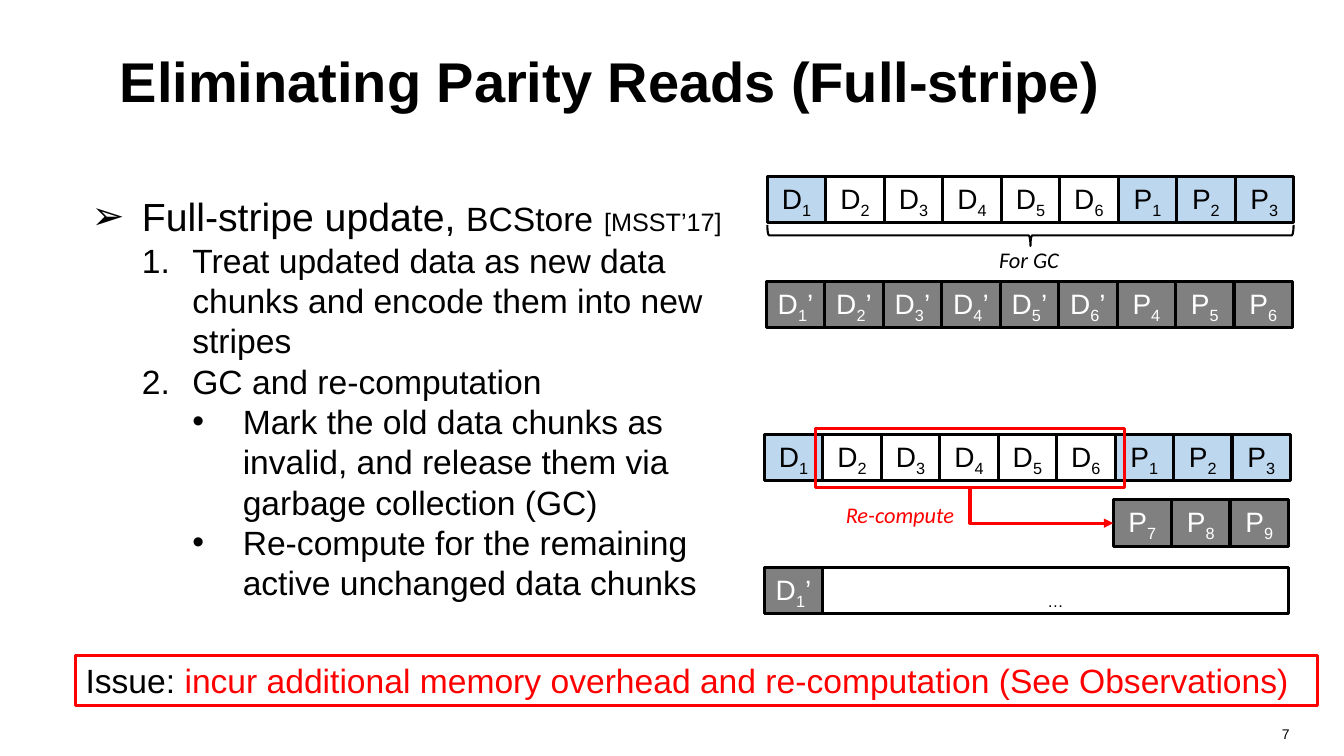
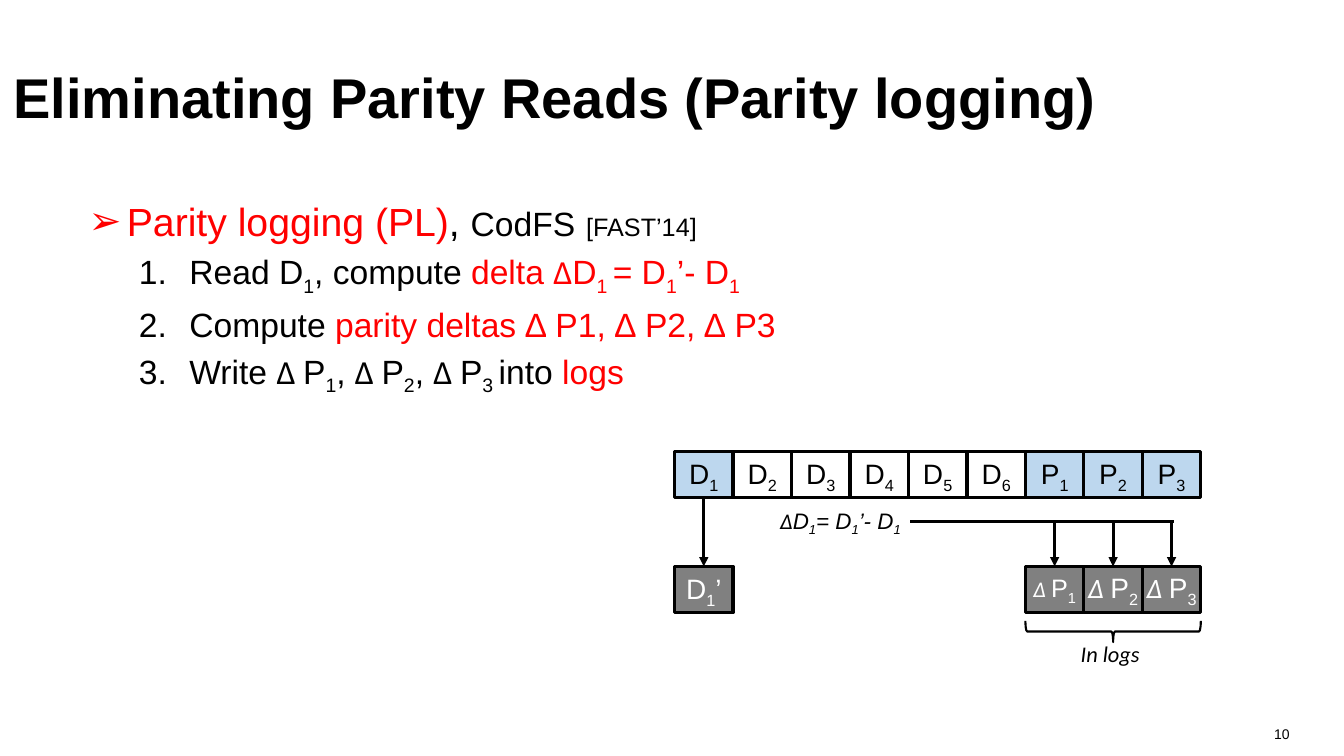
from dataclasses import dataclass, field
from typing import Any

import lxml.etree
import pptx
import pptx.dml.color
import pptx.enum.shapes
import pptx.enum.text
import pptx.oxml.ns
import pptx.util

Inches = pptx.util.Inches
SHAPE = pptx.enum.shapes.MSO_SHAPE
LINE = pptx.enum.shapes.MSO_CONNECTOR
ALIGN = pptx.enum.text.PP_ALIGN
ANCHOR = pptx.enum.text.MSO_ANCHOR
qn = pptx.oxml.ns.qn

COLORS = {
    "black": "000000",
    "white": "FFFFFF",
    "red": "FF0000",
    "blue": "BDD7EE",
    "gray": "808080",
}
BASE_FORMAT = {"name": "Arial", "size": 24, "color": "black", "bold": False, "italic": False}
CAPTION = {"name": "Calibri", "size": 16, "italic": True}
CELL_W, CELL_H = 0.58, 0.46
BRACE_H = 0.21
STRIPE = ["D_1", "D_2", "D_3", "D_4", "D_5", "D_6", "P_1", "P_2", "P_3"]


@dataclass
class Run:
    text: str
    subscript: bool = False
    format: dict[str, Any] = field(default_factory=dict)


@dataclass
class Paragraph:
    runs: list[Run]
    bullet: str = ""
    level: int = 0
    indent: float = 0
    hanging: float = 0
    space_before: int = 0
    align: Any = ALIGN.LEFT


@dataclass
class Box:
    left: float
    top: float
    width: float
    height: float

    def lengths(self) -> list[Any]:
        return [Inches(v) for v in (self.left, self.top, self.width, self.height)]


def rich(text: str, **style: Any) -> list[Run]:
    parts = text.split("_")
    return [Run(part, i % 2 == 1, style) for i, part in enumerate(parts) if part]


def rgb(color: str) -> Any:
    return pptx.dml.color.RGBColor.from_string(COLORS[color])


def add_element(parent: Any, tag: str, **attributes: str) -> Any:
    return lxml.etree.SubElement(parent, qn(tag), attributes)


def write_run(paragraph: Any, spec_run: Run) -> None:
    run = paragraph.add_run()
    run.text = spec_run.text
    values = BASE_FORMAT | spec_run.format
    run.font.color.rgb = rgb(values.pop("color"))
    values["size"] = pptx.util.Pt(values["size"])
    for name, value in values.items():
        setattr(run.font, name, value)
    if spec_run.subscript:
        run.font._element.set("baseline", "-25000")


def write_bullet(paragraph: Any, content: Paragraph) -> None:
    properties = paragraph._p.get_or_add_pPr()
    properties.set("marL", str(Inches(content.indent)))
    properties.set("indent", str(Inches(-content.hanging)))
    if content.space_before:
        spacing = add_element(properties, "a:spcBef")
        add_element(spacing, "a:spcPct", val=str(content.space_before * 1000))
    add_element(properties, "a:buFont", typeface="Arial")
    if content.bullet == "1.":
        add_element(properties, "a:buAutoNum", type="arabicPeriod")
    else:
        add_element(properties, "a:buChar", char=content.bullet)


def write_text(
    shape: Any, content: list[Paragraph], anchor: Any = ANCHOR.TOP, wrap: bool = True
) -> None:
    frame = shape.text_frame
    frame.word_wrap = wrap
    frame.vertical_anchor = anchor
    for index, item in enumerate(content):
        paragraph = frame.add_paragraph() if index else frame.paragraphs[0]
        paragraph.alignment = item.align
        paragraph.level = item.level
        if item.bullet:
            write_bullet(paragraph, item)
        for run in item.runs:
            write_run(paragraph, run)


def add_text(
    slide: Any, box: Box, content: list[Paragraph], anchor: Any = ANCHOR.TOP, wrap: bool = True
) -> None:
    write_text(slide.shapes.add_textbox(*box.lengths()), content, anchor, wrap)


def add_caption(slide: Any, box: Box, runs: list[Run]) -> None:
    add_text(slide, box, [Paragraph(runs)], wrap=False)


def add_outline(
    slide: Any, box: Box, fill: str = "", line: str = "black", weight: float = 2.25,
    preset: Any = SHAPE.RECTANGLE,
) -> Any:
    shape = slide.shapes.add_shape(preset, *box.lengths())
    shape.shadow.inherit = False
    if fill:
        shape.fill.solid()
        shape.fill.fore_color.rgb = rgb(fill)
    else:
        shape.fill.background()
    shape.line.color.rgb = rgb(line)
    shape.line.width = pptx.util.Pt(weight)
    return shape


def add_chunk(
    slide: Any, box: Box, fill: str, runs: list[Run], tight: bool = False
) -> Any:
    chunk = add_outline(slide, box, fill)
    if tight:
        chunk.text_frame.margin_left = chunk.text_frame.margin_right = 0
    anchor = ANCHOR.MIDDLE if tight else ANCHOR.TOP
    write_text(chunk, [Paragraph(runs, align=ALIGN.CENTER)], anchor, wrap=False)
    return chunk


def chunk_box(left: float, top: float, index: int = 0) -> Box:
    return Box(left + index * CELL_W, top, CELL_W, CELL_H)


def add_stripe(slide: Any, left: float, top: float) -> list[Any]:
    return [
        add_chunk(
            slide, chunk_box(left, top, i),
            "blue" if label == "D_1" or label.startswith("P") else "white",
            rich(label, size=20),
        )
        for i, label in enumerate(STRIPE)
    ]


def add_new_chunks(slide: Any, left: float, top: float, labels: list[str]) -> list[Any]:
    return [
        add_chunk(slide, chunk_box(left, top, i), "gray", rich(label, size=20, color="white"))
        for i, label in enumerate(labels)
    ]


def add_brace(slide: Any, left: float, top: float, width: float) -> None:
    box = Box(left + (width - BRACE_H) / 2, top + (BRACE_H - width) / 2, BRACE_H, width)
    brace = add_outline(slide, box, weight=1.5, preset=SHAPE.RIGHT_BRACE)
    brace.rotation = 90


def add_line(
    slide: Any, start: tuple[float, float], end: tuple[float, float],
    color: str = "black", arrow: bool = True, kind: Any = LINE.STRAIGHT,
) -> Any:
    line = slide.shapes.add_connector(kind, *[Inches(v) for v in (*start, *end)])
    line.line.color.rgb = rgb(color)
    line.line.width = pptx.util.Pt(2.25)
    properties = line._element.spPr
    if arrow:
        add_element(properties.find(qn("a:ln")), "a:tailEnd", type="triangle")
    add_element(properties, "a:effectLst")
    return line


def add_down_right_arrow(
    slide: Any, start: tuple[float, float], end: tuple[float, float], color: str
) -> None:
    arrow = add_line(slide, start, end, color, kind=LINE.ELBOW)
    across, down = end[0] - start[0], end[1] - start[1]
    arrow.left = Inches(start[0] + (across - down) / 2)
    arrow.top = Inches(start[1] + (down - across) / 2)
    arrow.width, arrow.height = Inches(down), Inches(across)
    properties = arrow._element.spPr
    properties.find(qn("a:prstGeom")).set("prst", "bentConnector2")
    transform = properties.find(qn("a:xfrm"))
    transform.set("rot", "16200000")
    transform.set("flipH", "1")


def start_slide(deck: Any, title: str, title_box: Box, number: int) -> Any:
    slide = deck.slides.add_slide(deck.slide_layouts[6])
    heading = Paragraph(rich(title, size=40, bold=True), align=ALIGN.CENTER)
    add_text(slide, title_box, [heading], ANCHOR.MIDDLE)
    page = Paragraph(rich(str(number), size=10), align=ALIGN.RIGHT)
    add_text(slide, Box(9.78, 7.15, 3.11, 0.35), [page])
    return slide


def build_full_stripe(deck: Any) -> None:
    slide = start_slide(
        deck, "Eliminating Parity Reads (Full-stripe)", Box(0.67, 0.17, 10.75, 1.25), 7
    )
    lead = (
        rich("Full-stripe update, ", size=28) + rich("BCStore")
        + rich(" ", size=28) + rich("[MSST’17]", size=18)
    )
    points = [
        ("1.", 1, "Treat updated data as new data chunks and encode them into new stripes"),
        ("1.", 1, "GC and re-computation"),
        ("•", 2, "Mark the old data chunks as invalid, and release them via garbage collection (GC)"),
        ("•", 2, "Re-compute for the remaining active unchanged data chunks"),
    ]
    add_text(slide, Box(0.81, 1.86, 6.6, 4.21), [
        Paragraph(lead, "➢", 0, 0.5, 0.5),
        *[Paragraph(rich(text), bullet, level, 0.5 + level * 0.5, 0.5)
          for bullet, level, text in points],
    ])

    add_stripe(slide, 7.61, 1.75)
    add_brace(slide, 7.61, 2.23, 9 * CELL_W)
    add_caption(slide, Box(9.81, 2.39, 0.81, 0.37), rich("For GC", **CAPTION))
    new_data = [f"D_{i}_’" for i in range(1, 7)]
    add_new_chunks(slide, 7.6, 2.79, new_data + ["P_4", "P_5", "P_6"])

    add_stripe(slide, 7.58, 4.31)
    add_new_chunks(slide, 11.04, 4.96, ["P_7", "P_8", "P_9"])
    add_new_chunks(slide, 7.58, 5.63, ["D_1_’"])
    add_chunk(slide, Box(8.16, 5.63, 4.62, CELL_H), "white", rich("_…", size=20))
    add_outline(slide, Box(8.09, 4.25, 3.06, 0.59), line="red")
    add_down_right_arrow(slide, (9.62, 4.84), (11.04, 5.19), "red")
    add_caption(slide, Box(8.29, 4.92, 1.29, 0.37), rich("Re-compute", **CAPTION, color="red"))

    issue = add_outline(slide, Box(0.75, 6.5, 12.32, 0.5), line="red")
    write_text(issue, [Paragraph(rich("Issue: ") + rich(
        "incur additional memory overhead and re-computation (See Observations)", color="red"
    ))])


def build_parity_logging(deck: Any) -> None:
    slide = start_slide(
        deck, "Eliminating Parity Reads (Parity logging)", Box(0, 0.33, 11, 1.25), 10
    )
    lead = (
        rich("Parity logging (PL)", size=28, color="red") + rich(", ", size=28)
        + rich("CodFS") + rich(" ", size=28) + rich("[FAST’14]", size=18)
    )
    write_logs = rich("Write ")
    for label in ("P_1_, ", "P_2_, ", "P_3 _into "):
        write_logs += rich("∆ ", name="Calibri") + rich(label)
    steps = [
        rich("Read D_1_, compute ") + rich("delta ", color="red")
        + rich("∆", name="Calibri", color="red") + rich("D_1 _= D_1_’- D_1", color="red"),
        rich("Compute ") + rich("parity deltas ∆ P1, ∆ P2, ∆ P3", color="red"),
        write_logs + rich("logs", color="red"),
    ]
    add_text(slide, Box(0.78, 1.91, 7.75, 3.44), [
        Paragraph(lead, "➢", 0, 0.38, 0.38, 50),
        *[Paragraph(step, "1.", 1, 1, 0.5, 20) for step in steps],
    ])

    left, stripe_top, log_top, bus_y = 6.69, 4.48, 5.62, 5.17
    old_data = add_stripe(slide, left, stripe_top)[0]
    new_data = add_new_chunks(slide, left, log_top, ["D_1_’"])[0]
    center = left + CELL_W / 2
    update = add_line(slide, (center, stripe_top + CELL_H), (center, log_top))
    update.begin_connect(old_data, 2)
    update.end_connect(new_data, 0)

    add_caption(
        slide, Box(7.64, 4.98, 1.44, 0.37),
        rich("∆", **CAPTION) + rich("D_1_= D_1_’- D_1", size=16, italic=True),
    )
    log_left = left + 6 * CELL_W
    for i, (delta_size, parity_size) in enumerate([(16, 18), (20, 20), (20, 20)]):
        box = chunk_box(log_left, log_top, i)
        delta = rich("∆ ", name="Calibri", size=delta_size, italic=True, color="white")
        parity = rich(f"P_{i + 1}", size=parity_size, color="white")
        log = add_chunk(slide, box, "gray", delta + parity, tight=True)
        middle = box.left + CELL_W / 2
        add_line(slide, (middle, bus_y), (middle, log_top)).end_connect(log, 0)
    add_line(slide, (9.03, bus_y), (11.64, bus_y), arrow=False)
    add_brace(slide, log_left, 6.16, 3 * CELL_W)
    add_caption(slide, Box(10.62, 6.3, 0.79, 0.37), rich("In logs", **CAPTION))


def main() -> None:
    deck = pptx.Presentation()
    deck.slide_width, deck.slide_height = Inches(13.33), Inches(7.5)
    build_full_stripe(deck)
    build_parity_logging(deck)
    deck.save("out.pptx")


if __name__ == "__main__":
    main()
